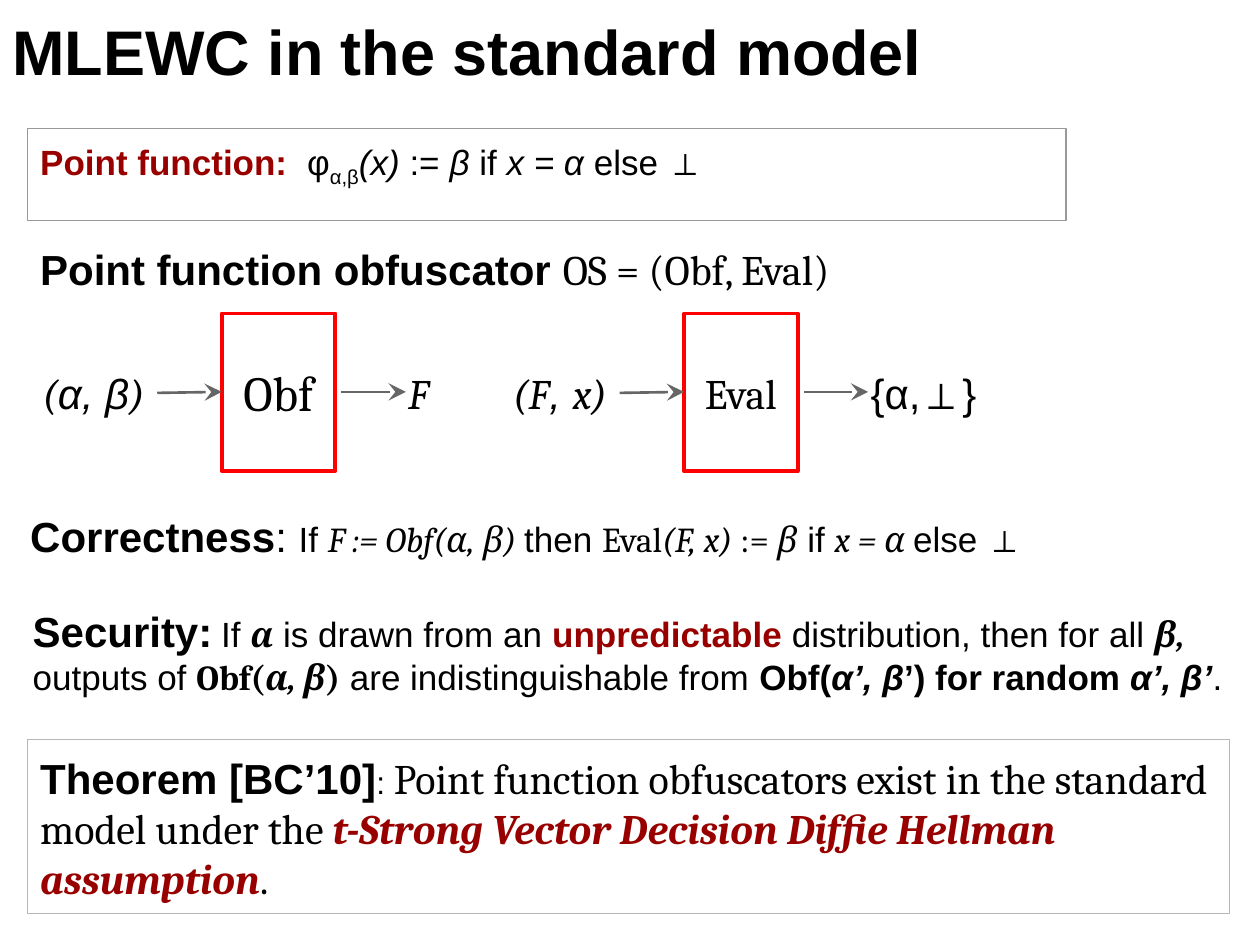
"""Build a slide on point function obfuscators in the standard model."""
from lxml.etree import SubElement as add_sub
from pptx import Presentation
from pptx.dml.color import RGBColor
from pptx.enum.shapes import MSO_CONNECTOR as LINK, MSO_SHAPE as SHAPE
from pptx.enum.text import MSO_ANCHOR as ANCHOR, MSO_AUTO_SIZE as FIT, PP_ALIGN as ALIGN
from pptx.oxml.ns import qn
from pptx.util import Cm, Pt

BLACK = RGBColor(0x00, 0x00, 0x00)
DARK_RED = RGBColor(0x98, 0x00, 0x00)
RED = RGBColor(0xFF, 0x00, 0x00)
GRAY = RGBColor(0x99, 0x99, 0x99)
PALE = RGBColor(0xB7, 0xB7, 0xB7)
DARK = RGBColor(0x66, 0x66, 0x66)

# Run marks: b bold, i italic, c Cambria, r dark red, s subscript
TITLE = [("MLEWC in the standard model", "b")]
POINT = [
    ("Point function:  ", "br"), ("φ", ""), ("α,β", "s"), ("(x)", "i"), (" := ", ""),
    ("β", "i"), (" if", ""), (" x = α ", "i"), ("else ⊥", ""),
]
SCHEME = [("Point function obfuscator ", "b"), ("OS = (Obf, Eval)", "c")]
CORRECT = [
    ("Correctness", "b", 24), (": ", "", 24), ("If ", ""), ("F := Obf(α, β) ", "ci"),
    ("then ", ""), ("Eval", "c"), ("(F, x)", "ci"), (" := ", "c"), ("β", "ci"),
    (" if ", ""), ("x = α ", "ci"), ("else ⊥", ""),
]
SECURE = [
    ("Security:", "b", 24), (" ", "", 18), ("If ", ""), ("α", "bci"),
    (" is drawn from an ", ""), ("unpredictable", "br"),
    (" distribution, then for all ", ""), ("β, ", "bci"), ("outputs of ", ""),
    ("Obf(", "bc"), ("α, β", "bci"), (")", "bc"), (" are indistinguishable from ", ""),
    ("Obf(", "b"), ("α’, β", "bi"), ("’) for random ", "b"), ("α’, β’", "bi"), (".", ""),
]
THEOREM = [
    ("Theorem [BC’10]", "b"), (": ", "", 18),
    ("Point function obfuscators exist in the standard model under the ", "c"),
    ("t-Strong Vector Decision Diffie Hellman assumption", "bcir"), (".", "c"),
]

HOLDERS = [
    (0, TITLE, 36, (0, 0, 22.86, 3.18), None),
    (1, POINT, 20, (0.56, 2.59, 20.93, 1.85), GRAY),
    (2, SCHEME, 24, (0.56, 4.65, 22.86, 4.42), None),
    (3, THEOREM, 24, (0.56, 14.91, 24.23, 3.51), PALE),
]
CLAIMS = [
    (CORRECT, (0.36, 9.7, 24.43, 2.21)),
    (SECURE, (0.41, 10.69, 25.17, 4.88)),
]
STEPS = [
    ([("(", "ci"), ("α, β", "i"), (")", "ci")], "Obf", 28, [("F", "ci")]),
    ([("(F", "ci"), (", ", "i"), ("x)", "ci")], "Eval", 24, [("{α,⊥}", "")]),
]
LEFT, PITCH = 4.47, 9.32
BOX_TOP, BOX_W, BOX_H = 6.32, 2.29, 3.18
TEXT_TOP, TEXT_W, TEXT_H = 6.81, 4.67, 2.21
ARROW, MID = 1.3, 7.9


def write(shape, runs, size=24, align=ALIGN.LEFT, anchor=ANCHOR.MIDDLE, before=0):
    frame = shape.text_frame
    frame.word_wrap, frame.auto_size = True, FIT.NONE
    frame.vertical_anchor = anchor
    frame.margin_left = frame.margin_right = Cm(0.25)
    frame.margin_top = frame.margin_bottom = Cm(0.25)
    para = frame.paragraphs[0]
    para.alignment, para.space_before = align, Pt(before)
    props = para._p.get_or_add_pPr()
    props.set("marL", "0")
    props.set("indent", "0")
    add_sub(props, qn("a:buNone"))
    for text, marks, *own in runs:
        run = para.add_run()
        run.text = text
        font = run.font
        font.name = "Cambria" if "c" in marks else "Arial"
        font.size = Pt(own[0] if own else size)
        font.bold, font.italic = "b" in marks, "i" in marks
        font.color.rgb = DARK_RED if "r" in marks else BLACK
        if "s" in marks:
            run._r.get_or_add_rPr().set("baseline", "-25000")


def outline(shape, color, width):
    shape.line.color.rgb, shape.line.width = color, Pt(width)


def add_text(slide, place, runs, **style):
    write(slide.shapes.add_textbox(*map(Cm, place)), runs, **style)


def add_arrow(slide, left, drop=0):
    ends = (left, MID + drop, left + ARROW, MID)
    arrow = slide.shapes.add_connector(LINK.STRAIGHT, *map(Cm, ends))
    outline(arrow, DARK, 1.5)
    props = arrow._element.spPr
    add_sub(props.find(qn("a:ln")), qn("a:tailEnd"), type="stealth", w="lg", len="lg")
    add_sub(props, qn("a:effectLst"))


def add_step(slide, left, source, name, size, result):
    box = slide.shapes.add_shape(
        SHAPE.RECTANGLE, *map(Cm, (left, BOX_TOP, BOX_W, BOX_H)))
    box.shadow.inherit = False
    box.fill.background()
    outline(box, RED, 2.25)
    write(box, [(name, "c")], size=size, align=ALIGN.CENTER)
    start = left - ARROW
    add_text(slide, (start - TEXT_W, TEXT_TOP, TEXT_W, TEXT_H), source, align=ALIGN.RIGHT)
    add_arrow(slide, start, drop=0.02)
    exit_x = left + BOX_W + 0.12
    add_arrow(slide, exit_x)
    add_text(slide, (exit_x + 1.1, TEXT_TOP, TEXT_W, TEXT_H), result)


def main():
    deck = Presentation()
    deck.slide_width, deck.slide_height = Cm(25.4), Cm(19.05)
    slide = deck.slides.add_slide(deck.slide_layouts[4])
    slots = {slot.placeholder_format.idx: slot for slot in slide.placeholders}
    for key, runs, size, place, color in HOLDERS:
        slot = slots.pop(key)
        slot.left, slot.top, slot.width, slot.height = map(Cm, place)
        write(slot, runs, size=size, anchor=ANCHOR.TOP)
        if color:
            outline(slot, color, 0.75)
    for slot in slots.values():
        slot._element.getparent().remove(slot._element)
    for order, step in enumerate(STEPS):
        add_step(slide, LEFT + order * PITCH, *step)
    for runs, place in CLAIMS:
        add_text(slide, place, runs, size=20, before=6)
    deck.save("out.pptx")


if __name__ == "__main__":
    main()
